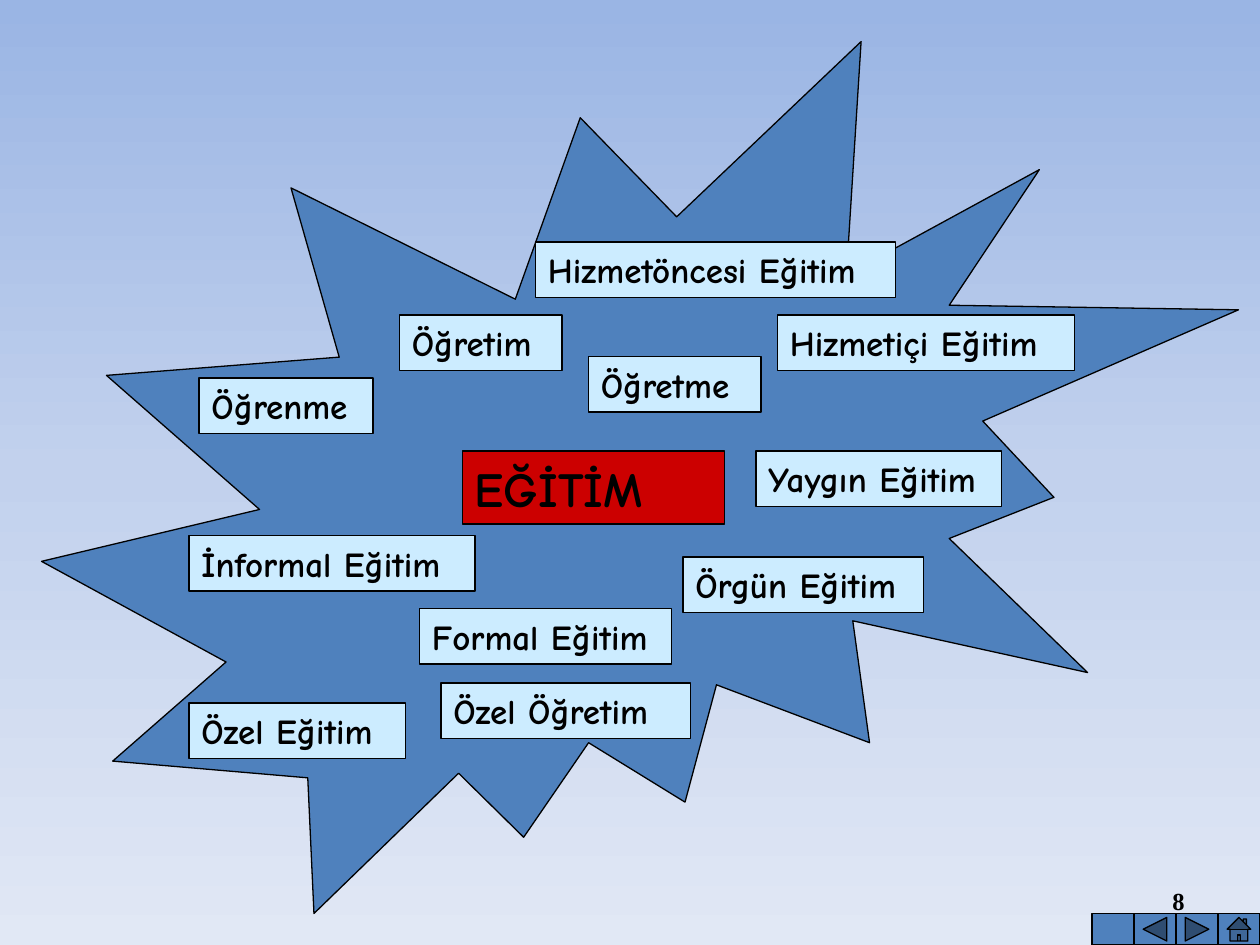
from copy import deepcopy

from pptx import Presentation
from pptx.dml.color import RGBColor
from pptx.enum.shapes import MSO_SHAPE
from pptx.enum.text import MSO_ANCHOR, PP_ALIGN
from pptx.oxml.ns import qn
from pptx.util import Inches, Pt

BLACK = RGBColor(0x00, 0x00, 0x00)
BLUE = RGBColor(0x4F, 0x81, 0xBD)
PALE = RGBColor(0xCC, 0xEC, 0xFF)
RED = RGBColor(0xCC, 0x00, 0x00)
SKY = [
    (0, RGBColor(0x9A, 0xB5, 0xE4)),
    (0.5, RGBColor(0xC2, 0xD1, 0xED)),
    (1, RGBColor(0xE1, 0xE8, 0xF5)),
]

# text, left, top, width
LABELS = [
    ("Öğretim", 3.17, 2.5, 1.29),
    ("Yaygın Eğitim", 6, 3.58, 1.95),
    ("Formal Eğitim", 3.33, 4.83, 2),
    ("Özel Eğitim", 1.5, 5.58, 1.72),
    ("Öğrenme", 1.58, 3, 1.38),
    ("Hizmetöncesi Eğitim", 4.25, 1.92, 2.86),
    ("Örgün Eğitim", 5.42, 4.42, 1.91),
    ("Hizmetiçi Eğitim", 6.17, 2.5, 2.36),
    ("İnformal Eğitim", 1.5, 4.25, 2.27),
    ("Öğretme", 4.67, 2.83, 1.37),
    ("Özel Öğretim", 3.5, 5.42, 1.98),
]
BUTTONS = [
    MSO_SHAPE.ACTION_BUTTON_CUSTOM,
    MSO_SHAPE.ACTION_BUTTON_BACK_OR_PREVIOUS,
    MSO_SHAPE.ACTION_BUTTON_FORWARD_OR_NEXT,
    MSO_SHAPE.ACTION_BUTTON_HOME,
]


def paint_sky(slide):
    """Fill the background with a three-stop gradient, top to bottom."""
    fill = slide.background.fill
    fill.gradient()
    fill.gradient_angle = 270
    stops = slide.element.find(".//" + qn("a:gsLst"))
    stops.insert(1, deepcopy(stops[0]))
    for stop, (place, color) in zip(fill.gradient_stops, SKY):
        stop.position = place
        stop.color.rgb = color


def add_form(slide, kind, box, color):
    form = slide.shapes.add_shape(kind, *map(Inches, box))
    form.shadow.inherit = False
    form.fill.solid()
    form.fill.fore_color.rgb = color
    form.line.color.rgb = BLACK
    form.line.width = Pt(0.75)
    return form


def set_text(shape, text, size, face="Comic Neue", align=PP_ALIGN.LEFT):
    frame = shape.text_frame
    frame.word_wrap = True
    frame.vertical_anchor = MSO_ANCHOR.MIDDLE
    frame.text = text
    line = frame.paragraphs[0]
    line.alignment = align
    font = line.runs[0].font
    font.name = face
    font.size = Pt(size)
    font.bold = True
    font.color.rgb = BLACK


def main():
    deck = Presentation()
    deck.slide_width, deck.slide_height = Inches(10), Inches(7.5)
    slide = deck.slides.add_slide(deck.slide_layouts[6])
    paint_sky(slide)

    number = slide.shapes.add_textbox(*map(Inches, (7.17, 6.95, 2.33, 0.4)))
    set_text(number, "8", 14, "Times New Roman", PP_ALIGN.RIGHT)

    step = 1 / 3
    for i, kind in enumerate(BUTTONS):
        left = 10 - (len(BUTTONS) - i) * step
        add_form(slide, kind, (left, 7.25, step, 0.25), BLUE)

    add_form(slide, MSO_SHAPE.EXPLOSION2, (0.33, 0.33, 9.5, 6.92), BLUE)

    topic = add_form(slide, MSO_SHAPE.RECTANGLE, (3.67, 3.58, 2.08, 0.58), RED)
    set_text(topic, "EĞİTİM", 28)
    for text, left, top, width in LABELS:
        label = add_form(slide, MSO_SHAPE.RECTANGLE, (left, top, width, 0.44), PALE)
        set_text(label, text, 20)

    deck.save("out.pptx")


if __name__ == "__main__":
    main()
